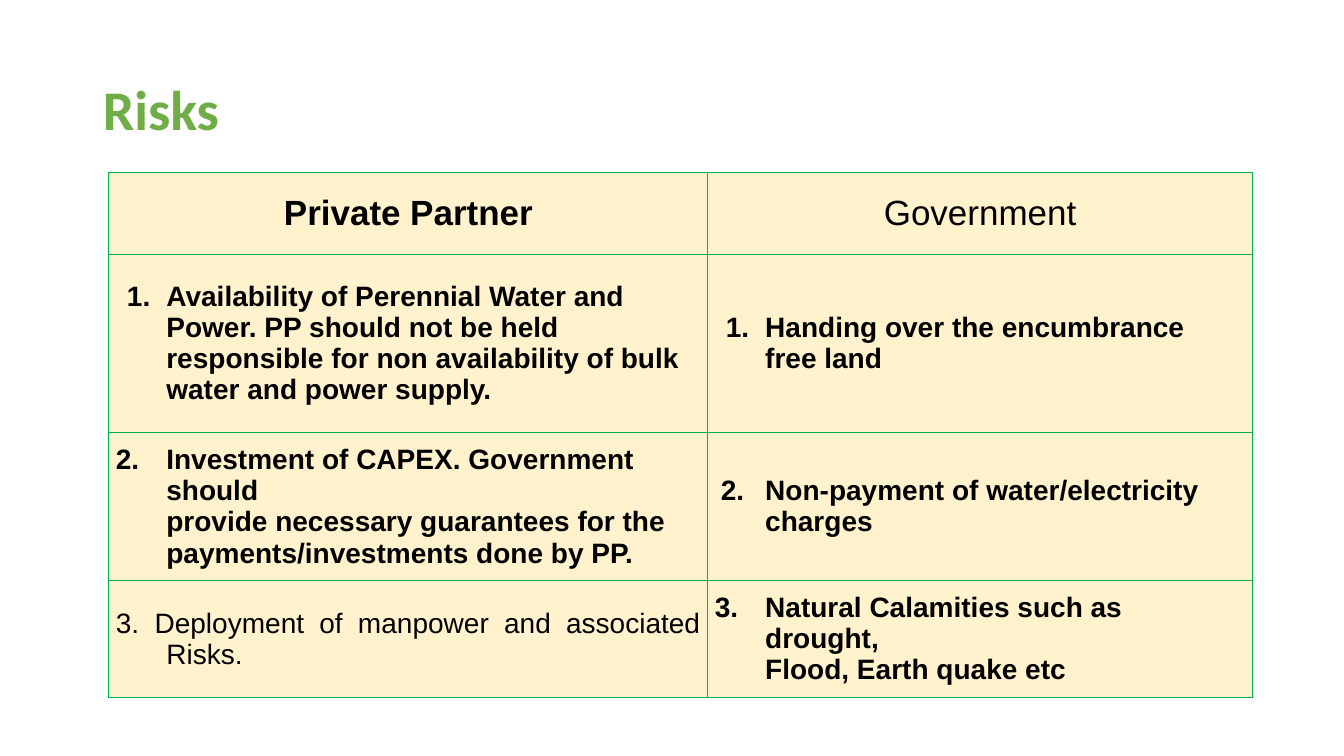
from lxml import etree
from pptx import Presentation
from pptx.dml.color import RGBColor
from pptx.enum import text as t
from pptx.oxml import parse_xml
from pptx.oxml.ns import nsdecls, qn
from pptx.util import Inches, Pt

GREEN, CREAM, BLACK, EDGE = "70AD47", "FFF2CC", "000000", "00B050"
LEFT, MID, JUST = t.PP_ALIGN.LEFT, t.PP_ALIGN.CENTER, t.PP_ALIGN.JUSTIFY


def style(para, face, size, color, bold):
    for run in para.runs:
        font = run.font
        font.name, font.size, font.bold = face, Pt(size), bold
        font.color.rgb = RGBColor.from_string(color)


def number(para, start):
    """Number the paragraph automatically, beginning at start."""
    props = para._p.get_or_add_pPr()
    ink = etree.SubElement(props, qn("a:buClr"))
    etree.SubElement(ink, qn("a:srgbClr"), val=BLACK)
    etree.SubElement(props, qn("a:buAutoNum"), type="arabicPeriod", startAt=str(start))


prs = Presentation()
prs.slide_width, prs.slide_height = Inches(13.33), Inches(7.5)
slide = prs.slides.add_slide(prs.slide_layouts[5])

title = slide.shapes.title
title.left, title.top = Inches(0.92), Inches(0.8)
title.width, title.height = Inches(11.5), Inches(0.63)
frame = title.text_frame
frame.text = "Risks"
frame.vertical_anchor = t.MSO_ANCHOR.MIDDLE
frame.auto_size = t.MSO_AUTO_SIZE.NONE
head = frame.paragraphs[0]
head.alignment, head.line_spacing = LEFT, 0.9
style(head, "Calibri", 40, GREEN, True)

# Each cell: text, bold, alignment, hanging indent, automatic number
rows = [
    [("Private Partner", True, MID, 0, None),
     ("Government", False, MID, 0, None)],
    [("Availability of Perennial Water and Power. PP should not be held "
      "responsible for non availability of bulk water and power supply.",
      True, LEFT, 0.39, 1),
     ("Handing over the encumbrance free land", True, LEFT, 0.39, 1)],
    [("Investment of CAPEX. Government should \vprovide necessary guarantees "
      "for the payments/investments done by PP.", True, LEFT, 0.5, 2),
     ("Non-payment of water/electricity charges", True, LEFT, 0.44, 2)],
    [("3. Deployment of manpower and associated Risks.", False, JUST, 0.5, None),
     ("Natural Calamities such as drought, \vFlood, Earth quake etc",
      True, LEFT, 0.5, 3)],
]
table = slide.shapes.add_table(
    4, 2, Inches(1.08), Inches(1.71), Inches(11.34), Inches(5.21)).table
table.first_row = table.horz_banding = False
for col, width in zip(table.columns, (5.94, 5.4)):
    col.width = Inches(width)
for row, height in zip(table.rows, (0.81, 1.77, 1.47, 1.16)):
    row.height = Inches(height)

for r, row in enumerate(rows):
    for c, (words, bold, align, hang, start) in enumerate(row):
        cell = table.cell(r, c)
        cell.vertical_anchor = t.MSO_ANCHOR.MIDDLE
        cell.margin_left = Inches(0.07)
        cell.margin_right = Inches(0.15 if start else 0.07)
        cell.margin_top = cell.margin_bottom = 0
        props = cell._tc.get_or_add_tcPr()
        for side in "LRTB":
            props.append(parse_xml(
                f'<a:ln{side} {nsdecls("a")} w="{Pt(0.75)}"><a:solidFill>'
                f'<a:srgbClr val="{EDGE}"/></a:solidFill></a:ln{side}>'))
        cell.fill.solid()
        cell.fill.fore_color.rgb = RGBColor.from_string(CREAM)

        para = cell.text_frame.paragraphs[0]
        para.text, para.alignment = words, align
        if hang:
            indent = para._p.get_or_add_pPr()
            indent.set("marL", str(Inches(0.5)))
            indent.set("indent", str(-Inches(hang)))
        if start:
            number(para, start)
        style(para, "Arial", 20 if r else 25, BLACK, bold)

prs.save("out.pptx")
